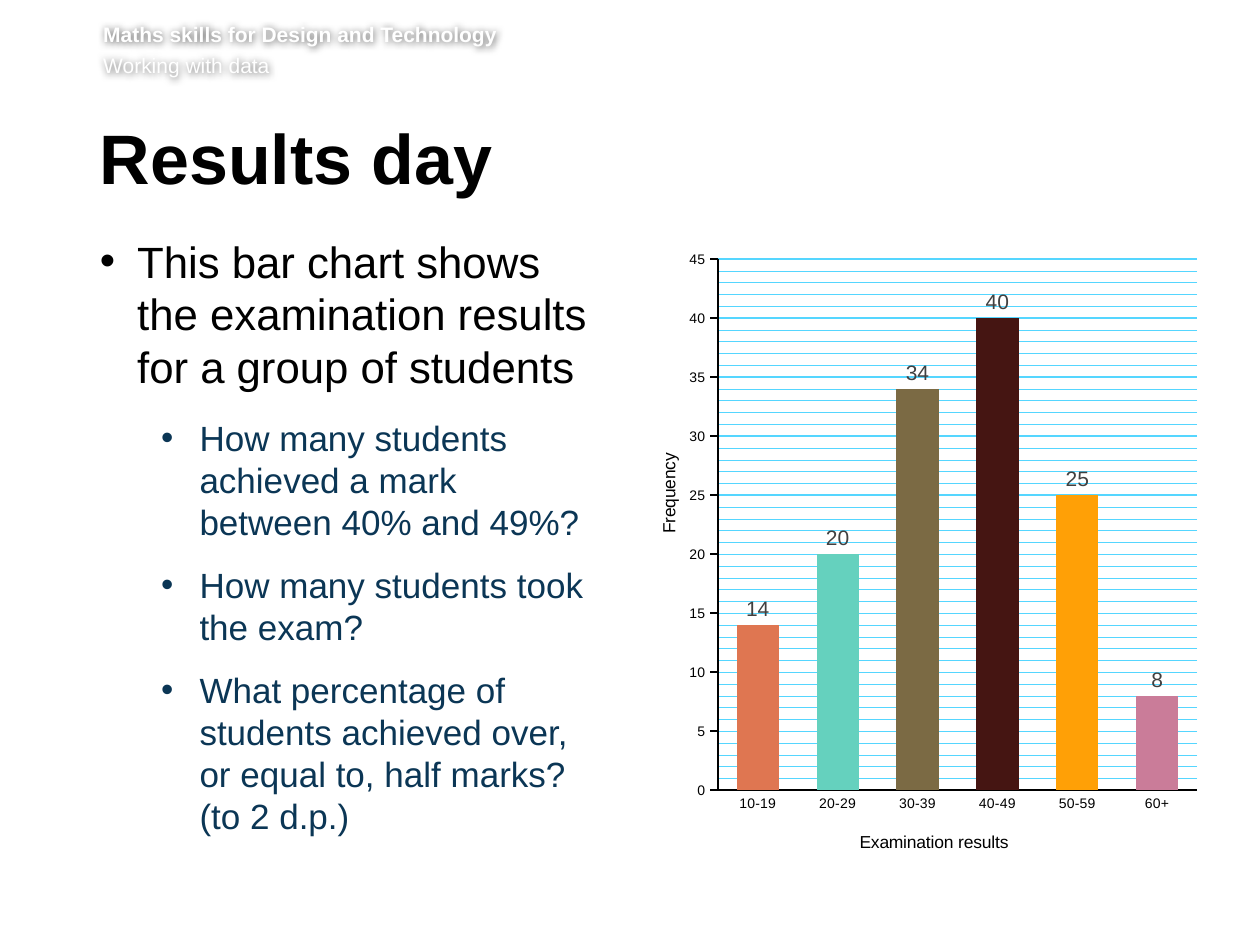
from dataclasses import dataclass

from lxml import etree
from pptx import Presentation
from pptx.chart.data import CategoryChartData
from pptx.dml.color import RGBColor
from pptx.enum.chart import XL_CHART_TYPE, XL_LABEL_POSITION, XL_TICK_MARK
from pptx.oxml import parse_xml
from pptx.oxml.ns import nsdecls, qn
from pptx.util import Pt

COLUMN = XL_CHART_TYPE.COLUMN_CLUSTERED
OUTSIDE_END = XL_LABEL_POSITION.OUTSIDE_END
TICK_NONE, TICK_OUT = XL_TICK_MARK.NONE, XL_TICK_MARK.OUTSIDE


@dataclass(frozen=True)
class Theme:
    font: str = "Arial"
    black: str = "000000"
    white: str = "FFFFFF"
    navy: str = "0B3655"
    label: str = "404040"
    grid: str = "55D6FF"
    bars: tuple = ("DF7651", "65D1BE", "7B6A44", "451512", "FFA006", "CA7C99")
    title: int = 40
    body: int = 25
    question: int = 20
    small: int = 12
    axis_title: int = 10
    tick: int = 8


THEME = Theme()

INTRO = "This bar chart shows\nthe examination results for a group of students"
QUESTIONS = [
    "How many students achieved a mark\nbetween 40% and 49%?",
    "How many students took the exam?",
    "What percentage of students achieved over, or equal to, half marks?\n(to 2 d.p.)",
]
RESULTS = {"10-19": 14, "20-29": 20, "30-39": 34, "40-49": 40, "50-59": 25, "60+": 8}


def style(font, size, color, bold=False):
    font.name = THEME.font
    font.size = Pt(size)
    font.bold = bold
    font.color.rgb = RGBColor.from_string(color)


def add_box(s, box, insets):
    sp = s.shapes.add_textbox(*(Pt(v) for v in box))
    tf = sp.text_frame
    tf.word_wrap = True
    tf.margin_left, tf.margin_top, tf.margin_right, tf.margin_bottom = map(Pt, insets)
    return sp


def add_text(p, text, size, color, bold=False):
    for i, line in enumerate(text.split("\n")):
        if i:
            p.add_line_break()
        r = p.add_run()
        r.text = line
        style(r.font, size, color, bold)


def set_bullet(p, left, hang):
    pPr = p._p.get_or_add_pPr()
    pPr.set("marL", str(Pt(left)))
    pPr.set("indent", str(-Pt(hang)))
    etree.SubElement(pPr, qn("a:buFont")).set("typeface", THEME.font)
    etree.SubElement(pPr, qn("a:buChar")).set("char", "•")


def add_header(s, box):
    sp = add_box(s, box, (0, 0, 0, 3.6))
    tf = sp.text_frame
    add_text(tf.paragraphs[0], "Maths skills for Design and Technology",
             THEME.small, THEME.white, True)
    p = tf.add_paragraph()
    p.space_before = Pt(2.9)
    add_text(p, "Working with data", THEME.small, THEME.white)
    # Soft dark halo that keeps the white text legible
    sp._element.spPr.append(parse_xml(
        f'<a:effectLst {nsdecls("a")}><a:outerShdw blurRad="{Pt(4)}" dist="0" '
        f'algn="ctr" rotWithShape="0"><a:srgbClr val="{THEME.black}">'
        '<a:alpha val="60000"/></a:srgbClr></a:outerShdw></a:effectLst>'))


def add_title(s, box):
    p = add_box(s, box, (0, 3.6, 7.2, 3.6)).text_frame.paragraphs[0]
    p.line_spacing = Pt(39)
    add_text(p, "Results day", THEME.title, THEME.black, True)


def add_questions(s, box):
    tf = add_box(s, box, (0, 0, 7.2, 3.6)).text_frame
    p = tf.paragraphs[0]
    set_bullet(p, 21.4, 21.4)
    p.line_spacing, p.space_after = Pt(30), Pt(14)
    add_text(p, INTRO, THEME.body, THEME.black)
    for question in QUESTIONS:
        p = tf.add_paragraph()
        p.level = 1
        set_bullet(p, 57, 22)
        p.line_spacing, p.space_after = Pt(24), Pt(12)
        add_text(p, question, THEME.question, THEME.navy)


def manual_layout(x, y, w=None, h=None):
    inner = '<c:layoutTarget val="inner"/>' if w else ""
    size = f'<c:w val="{w}"/><c:h val="{h}"/>' if w else ""
    return parse_xml(
        f'<c:layout {nsdecls("c")}><c:manualLayout>{inner}'
        '<c:xMode val="edge"/><c:yMode val="edge"/>'
        f'<c:x val="{x}"/><c:y val="{y}"/>{size}</c:manualLayout></c:layout>')


def style_axis(axis, title, x, y, tick):
    tf = axis.axis_title.text_frame
    add_text(tf.paragraphs[0], title, THEME.axis_title, THEME.black)
    el = axis.axis_title._element
    for old in el.findall(qn("c:layout")):
        el.remove(old)
    el.find(qn("c:tx")).addnext(manual_layout(x, y))
    axis.major_tick_mark, axis.minor_tick_mark = tick, TICK_NONE
    style(axis.tick_labels.font, THEME.tick, THEME.black)
    style_line(axis.format.line, THEME.black, 1)


def style_line(line, color, width):
    line.color.rgb = RGBColor.from_string(color)
    line.width = Pt(width)


def style_minor_gridlines(axis, color, width):
    axis.has_minor_gridlines = True
    axis._element.find(qn("c:minorGridlines")).append(parse_xml(
        f'<c:spPr {nsdecls("c", "a")}><a:ln w="{Pt(width)}"><a:solidFill>'
        f'<a:srgbClr val="{color}"/></a:solidFill></a:ln></c:spPr>'))


def add_results_chart(s, box):
    data = CategoryChartData()
    data.categories = list(RESULTS)
    data.add_series("Series 1", list(RESULTS.values()))
    chart = s.shapes.add_chart(COLUMN, *(Pt(v) for v in box), data).chart
    chart.has_legend = chart.has_title = False
    style(chart.font, THEME.axis_title, THEME.black)

    # Plot area
    area = chart._chartSpace.chart.plotArea
    for old in area.findall(qn("c:layout")):
        area.remove(old)
    area.insert(0, manual_layout(0.14, 0.04, 0.83, 0.86))

    # Axes and gridlines
    style_axis(chart.category_axis, "Examination results", 0.38, 0.96, TICK_NONE)
    axis = chart.value_axis
    style_axis(axis, "Frequency", 0.03, 0.35, TICK_OUT)
    axis.minimum_scale, axis.maximum_scale = 0, 45
    axis.major_unit, axis.minor_unit = 5, 1
    axis.has_major_gridlines = True
    style_line(axis.major_gridlines.format.line, THEME.grid, 0.75)
    style_minor_gridlines(axis, THEME.grid, 0.25)

    # Bars and values
    plot = chart.plots[0]
    plot.gap_width = 89
    plot.vary_by_categories = False
    series = plot.series[0]
    for i, color in enumerate(THEME.bars):
        fill = series.points[i].format.fill
        fill.solid()
        fill.fore_color.rgb = RGBColor.from_string(color)
    labels = series.data_labels
    labels.show_value = True
    labels.position = OUTSIDE_END
    style(labels.font, THEME.small, THEME.label)


def main():
    prs = Presentation()
    prs.slide_width, prs.slide_height = Pt(720), Pt(540)
    s = prs.slides.add_slide(prs.slide_layouts[6])
    add_header(s, (59, 12.5, 635, 35))
    add_title(s, (57, 71, 616, 53))
    add_questions(s, (57, 134, 295, 349))
    add_results_chart(s, (364, 134, 330, 356))
    prs.save("out.pptx")


if __name__ == "__main__":
    main()
